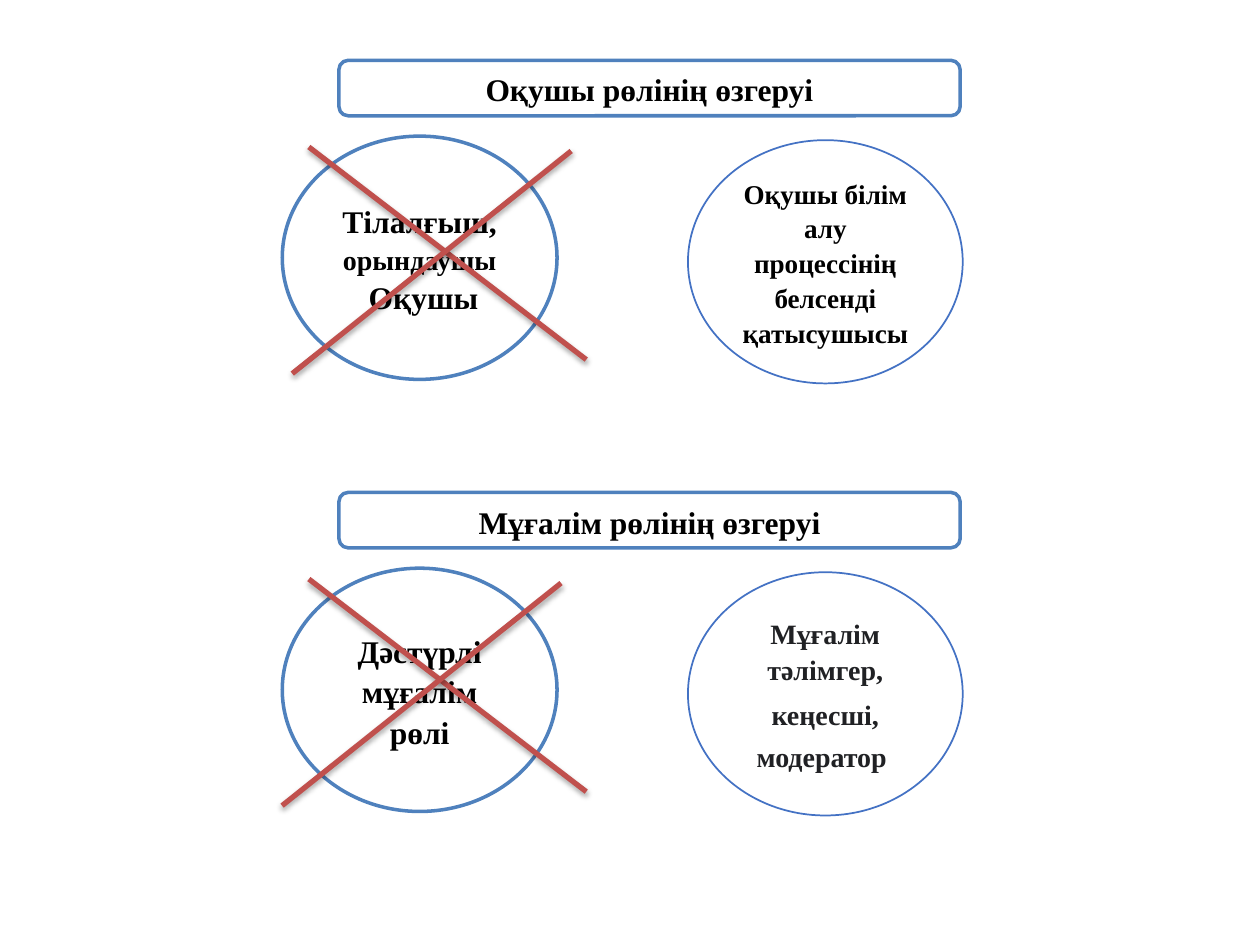
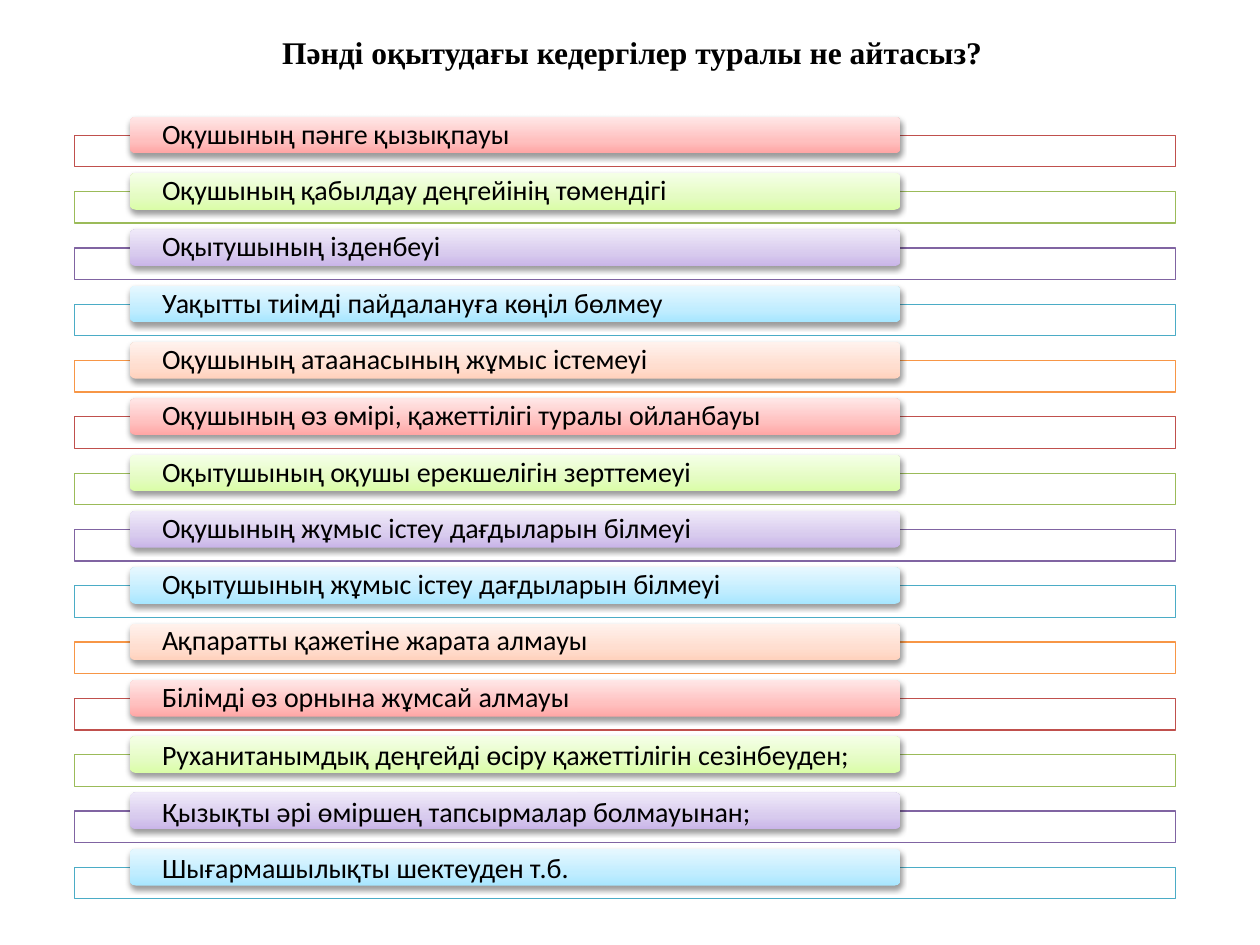
from copy import deepcopy

from lxml.etree import SubElement
from pptx import Presentation
from pptx.dml.color import RGBColor
from pptx.enum.shapes import MSO_CONNECTOR, MSO_SHAPE
from pptx.enum.text import MSO_ANCHOR, MSO_AUTO_SIZE, PP_ALIGN
from pptx.oxml.ns import qn
from pptx.util import Pt

SERIF, SANS = "Times New Roman", "Calibri"
BLACK, WHITE, INK = "000000", "FFFFFF", "202124"
BLUE, ROYAL, RED = "4F81BD", "4472C4", "C0504D"
TITLE_ONLY, BLANK = 5, 6

PALETTE = [
    (RED, ("FFA6A5", "FFC0BF", "FFE7E7")),
    ("9BBB59", ("DAFDA7", "E4FCC2", "F5FFE7")),
    ("8064A2", ("C9B5E8", "D8CBEE", "F0EAF9")),
    ("4BACC6", ("A7E6FF", "C1EDFF", "E7F8FF")),
    ("F79646", ("FFD2BD", "FFDED0", "FFF2ED")),
]
OBSTACLES = [
    "Оқушының пәнге қызықпауы",
    "Оқушының қабылдау деңгейінің төмендігі",
    "Оқытушының ізденбеуі",
    "Уақытты тиімді пайдалануға көңіл бөлмеу",
    "Оқушының атаанасының жұмыс істемеуі",
    "Оқушының өз өмірі, қажеттілігі туралы ойланбауы",
    "Оқытушының оқушы ерекшелігін зерттемеуі",
    "Оқушының жұмыс істеу дағдыларын білмеуі",
    "Оқытушының жұмыс істеу дағдыларын білмеуі",
    "Ақпаратты қажетіне жарата алмауы",
    "Білімді өз орнына жұмсай алмауы",
    "Руханитанымдық деңгейді өсіру қажеттілігін сезінбеуден;",
    "Қызықты әрі өміршең тапсырмалар болмауынан;",
    "Шығармашылықты шектеуден т.б.",
]
TIGHT_ROWS = 11
ROW_PITCH = 32.18


def rgb(value):
    return RGBColor.from_string(value)


def serif(text, size, color=BLACK):
    return text, size, SERIF, color, True


def sans(text, size, color=BLACK):
    return text, size, SANS, color, False


class Deck:
    """Holds the presentation, its style and the current slide."""

    def __init__(self):
        self.prs = Presentation()
        self.prs.slide_width, self.prs.slide_height = Pt(720), Pt(540)
        self.s = None

    def add_slide(self, layout):
        self.s = self.prs.slides.add_slide(self.prs.slide_layouts[layout])

    def add_text(self, tf, paragraphs, align=PP_ALIGN.CENTER, spacing=1.0):
        tf.word_wrap = True
        for i, runs in enumerate(paragraphs):
            p = tf.paragraphs[0] if i == 0 else tf.add_paragraph()
            p.alignment, p.line_spacing = align, spacing
            for text, size, font, color, bold in runs:
                r = p.add_run()
                r.text = text
                r.font.name, r.font.size, r.font.bold = font, Pt(size), bold
                r.font.color.rgb = rgb(color)

    def title(self, text, left, top, width, height):
        sp = self.s.shapes.title
        sp.left, sp.top, sp.width, sp.height = map(Pt, (left, top, width, height))
        tf = sp.text_frame
        tf.auto_size = MSO_AUTO_SIZE.NONE
        tf.vertical_anchor = MSO_ANCHOR.TOP
        self.add_text(tf, [[serif(text, 18)]])

    def shape(self, kind, box, line=None, weight=1.0, fill=WHITE):
        sp = self.s.shapes.add_shape(kind, *map(Pt, box))
        sp.shadow.inherit = False
        sp.fill.solid()
        sp.fill.fore_color.rgb = rgb(fill)
        if line:
            sp.line.color.rgb = rgb(line)
            sp.line.width = Pt(weight)
        else:
            sp.line.fill.background()
        sp.text_frame.vertical_anchor = MSO_ANCHOR.MIDDLE
        return sp

    def label(self, kind, box, paragraphs, line=BLUE, weight=2):
        sp = self.shape(kind, box, line, weight)
        self.add_text(sp.text_frame, paragraphs, spacing=1.07)

    def shadow(self, sp, alpha):
        spPr = sp._element.spPr
        effects = spPr.find(qn("a:effectLst"))
        if effects is None:
            effects = SubElement(spPr, qn("a:effectLst"))
        outer = SubElement(effects, qn("a:outerShdw"), blurRad="40000",
                           dist="23000", dir="5400000", rotWithShape="0")
        color = SubElement(outer, qn("a:srgbClr"), val=BLACK)
        SubElement(color, qn("a:alpha"), val=str(alpha * 1000))

    def stroke(self, x1, y1, x2, y2):
        cn = self.s.shapes.add_connector(MSO_CONNECTOR.STRAIGHT, *map(Pt, (x1, y1, x2, y2)))
        cn.line.color.rgb = rgb(RED)
        cn.line.width = Pt(3)
        self.shadow(cn, 35)

    def frame(self, box, line):
        sp = self.shape(MSO_SHAPE.RECTANGLE, box, line, 0.75)
        color = sp._element.spPr.find(qn("a:solidFill")).find(qn("a:srgbClr"))
        SubElement(color, qn("a:alpha"), val="90000")

    def bar(self, box, tones, text, spacing):
        sp = self.shape(MSO_SHAPE.ROUNDED_RECTANGLE, box)
        sp.fill.gradient()
        sp.fill.gradient_angle = 90
        stops = sp._element.spPr.find(".//" + qn("a:gsLst"))
        stops.append(deepcopy(stops[0]))
        for stop, position, tone in zip(sp.fill.gradient_stops, (0, 0.35, 1), tones):
            stop.position = position
            stop.color.rgb = rgb(tone)
        self.shadow(sp, 38)
        tf = sp.text_frame
        tf.margin_left = tf.margin_right = Pt(17.5)
        tf.margin_top = tf.margin_bottom = 0
        self.add_text(tf, [[sans(text, 16)]], PP_ALIGN.LEFT, spacing)

    def role_change(self, top, heading, old_role, new_role, rising_shift=0):
        self.label(MSO_SHAPE.ROUNDED_RECTANGLE, (193.7, top, 355, 31.7), [[serif(heading, 18)]])
        self.label(MSO_SHAPE.OVAL, (161.3, top + 43.3, 157, 139), old_role)
        self.label(MSO_SHAPE.OVAL, (393.1, top + 45.6, 157, 139), new_role, ROYAL, 1)
        self.stroke(176.5, top + 49.5, 335, top + 171)
        self.stroke(326.4 + rising_shift, top + 51.8, 167 + rising_shift, top + 179)


def main():
    deck = Deck()

    deck.add_slide(BLANK)
    deck.role_change(
        34.5, "Оқушы рөлінің өзгеруі",
        [[serif("Тілалғыш, ", 18), serif("орындаушы", 16)], [serif(" Оқушы", 18)]],
        [[serif("Оқушы білім алу процессінің белсенді қатысушысы", 15.5)]])
    deck.role_change(
        281.4, "Мұғалім рөлінің өзгеруі",
        [[serif("Дәстүрлі мұғалім рөлі", 18)]],
        [[serif("Мұғалім тәлімгер, кеңесші,", 16, INK), sans(" ", 21, INK),
          serif("модератор", 16, INK), sans(" ", 18)]],
        rising_shift=-5.8)

    deck.add_slide(TITLE_ONLY)
    deck.title("Пәнді оқытудағы кедергілер туралы не айтасыз?", 2.9, 15.1, 717, 29)
    for i, text in enumerate(OBSTACLES):
        line, tones = PALETTE[i % len(PALETTE)]
        y = 66.7 + i * ROW_PITCH
        deck.frame((42.5, y + 10.6, 629.3, 18), line)
        deck.bar((74.1, y, 440.6, 21), tones, text, 0.9 if i < TIGHT_ROWS else 1.0)

    deck.prs.save("out.pptx")


if __name__ == "__main__":
    main()
